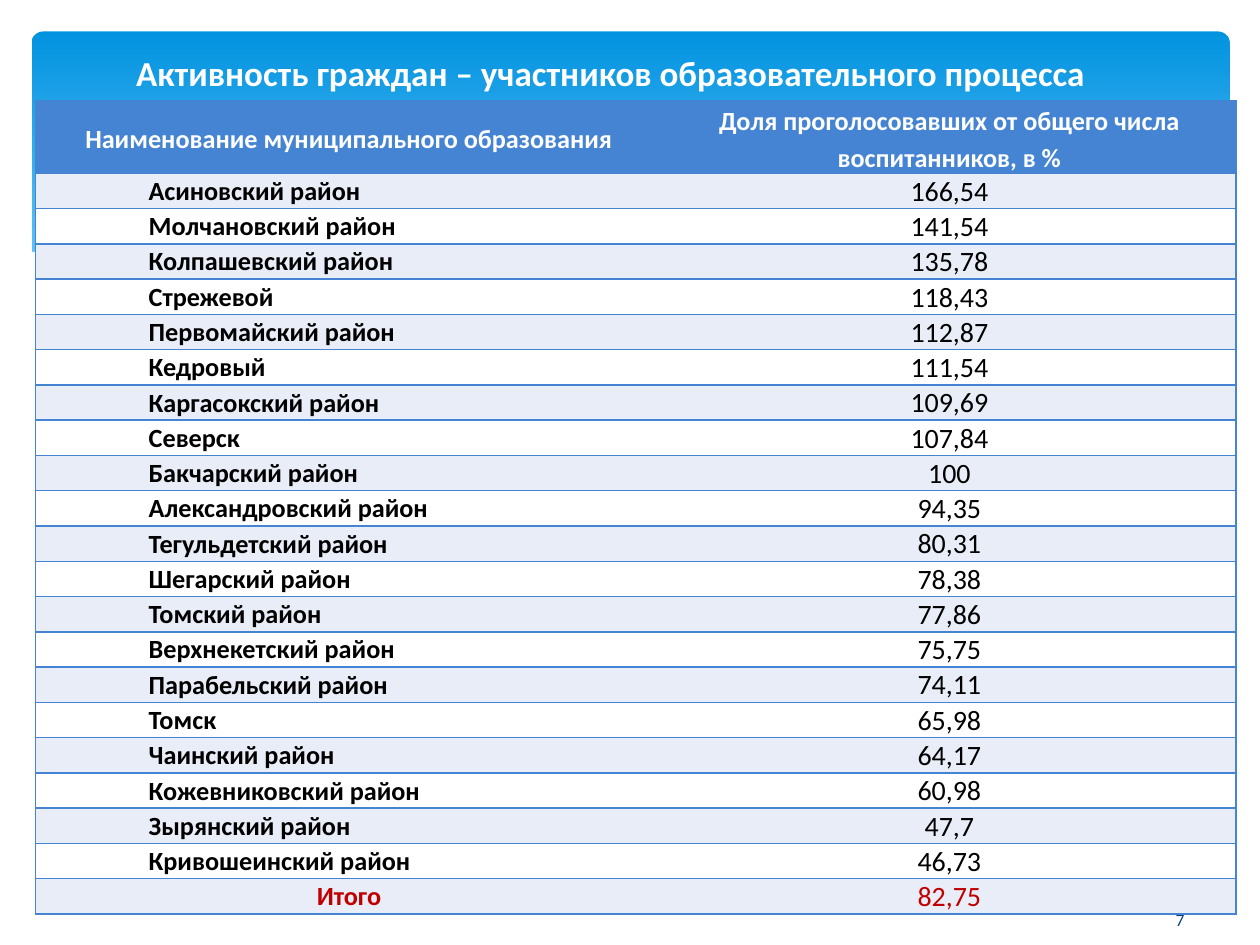
from typing import NamedTuple

from lxml.etree import SubElement
from pptx import Presentation
from pptx.dml.color import RGBColor
from pptx.enum.shapes import MSO_SHAPE
from pptx.enum.text import MSO_ANCHOR, MSO_AUTO_SIZE, PP_ALIGN
from pptx.oxml.ns import qn
from pptx.util import Inches, Pt

FONT = "Calibri"
BLUE, BAND, WHITE, BLACK, RED = "4584D3", "E9EDF7", "FFFFFF", "000000", "C00000"
ROW_HEIGHT, HEADER_HEIGHT = 0.28, 0.5
COLUMN_WIDTHS = (4.98, 4.55)


class Turnout(NamedTuple):
    district: str
    share: str


HEADER = Turnout("Наименование муниципального образования",
                 "Доля проголосовавших от общего числа воспитанников, в %")
DISTRICTS = [
    Turnout("Асиновский район", "166,54"),
    Turnout("Молчановский район", "141,54"),
    Turnout("Колпашевский район", "135,78"),
    Turnout("Стрежевой", "118,43"),
    Turnout("Первомайский район", "112,87"),
    Turnout("Кедровый", "111,54"),
    Turnout("Каргасокский район", "109,69"),
    Turnout("Северск", "107,84"),
    Turnout("Бакчарский район", "100"),
    Turnout("Александровский район", "94,35"),
    Turnout("Тегульдетский район", "80,31"),
    Turnout("Шегарский район", "78,38"),
    Turnout("Томский район", "77,86"),
    Turnout("Верхнекетский район", "75,75"),
    Turnout("Парабельский район", "74,11"),
    Turnout("Томск", "65,98"),
    Turnout("Чаинский район", "64,17"),
    Turnout("Кожевниковский район", "60,98"),
    Turnout("Зырянский район", "47,7"),
    Turnout("Кривошеинский район", "46,73"),
]
TOTAL = Turnout("Итого", "82,75")

WAVE = [
    (9.77, 2.46), (9.4, 2.59), (8.99, 2.69), (8.5, 2.75), (8.09, 2.77),
    (7.61, 2.75), (7.08, 2.7), (6.48, 2.62), (5.79, 2.5), (5.03, 2.33),
    (4.47, 2.2), (3.91, 2.07), (3.4, 1.97), (2.92, 1.9), (2.5, 1.86),
    (1.93, 1.84), (1.46, 1.85), (1.06, 1.89), (0.76, 1.95), (0.46, 2.03),
    (0.23, 2.13), (0.23, 3.29), (9.77, 3.29),
]


def rgb(color: str) -> RGBColor:
    return RGBColor.from_string(color)


def style(p, size: float, color: str, bold: bool = False,
          align: PP_ALIGN = PP_ALIGN.LEFT) -> None:
    p.alignment = align
    f = p.font
    f.name, f.size, f.bold = FONT, Pt(size), bold
    f.color.rgb = rgb(color)


def add_banner(s) -> None:
    """Draw the gradient banner and the white wave that cuts off its foot."""
    banner = s.shapes.add_shape(MSO_SHAPE.ROUNDED_RECTANGLE, Inches(0.25),
                                Inches(0.25), Inches(9.51), Inches(2.7))
    banner.adjustments[0] = 0.034
    banner.fill.gradient()
    banner.fill.gradient_angle = 270
    stops = ((0, "0293E0"), (0.9, "83D3FE"))
    for stop, (position, color) in zip(banner.fill.gradient_stops, stops):
        stop.position = position
        stop.color.rgb = rgb(color)

    builder = s.shapes.build_freeform(*WAVE[0], scale=Inches(1))
    builder.add_line_segments(WAVE[1:], close=True)
    wave = builder.convert_to_shape()
    wave.fill.solid()
    wave.fill.fore_color.rgb = rgb(WHITE)
    for sp in (banner, wave):
        sp.line.fill.background()
        sp.shadow.inherit = False


def add_slide_number(s, number: str) -> None:
    tf = s.shapes.add_textbox(Inches(8.73), Inches(7.1),
                              Inches(1.27), Inches(0.4)).text_frame
    tf.word_wrap = True
    tf.vertical_anchor = MSO_ANCHOR.MIDDLE
    tf.text = number
    style(tf.paragraphs[0], 10, "073E87", align=PP_ALIGN.CENTER)


def set_borders(cell, open_side: str) -> None:
    """Rule every side of the cell except the open one."""
    tc_pr = cell._tc.get_or_add_tcPr()
    for i, side in enumerate(("lnL", "lnR", "lnT", "lnB")):
        ln = SubElement(tc_pr, qn(f"a:{side}"), w=str(Pt(1)))
        if side == open_side:
            SubElement(ln, qn("a:noFill"))
        else:
            fill = SubElement(ln, qn("a:solidFill"))
            SubElement(fill, qn("a:srgbClr"), val=BLUE)
        tc_pr.insert(i, ln)


def fill_cell(cell, text: str, fill: str, margins: tuple[float, float, float]):
    """Set text, fill and (side, top, bottom) margins; return the paragraph."""
    side, top, bottom = (Inches(m) for m in margins)
    cell.margin_left = cell.margin_right = side
    cell.margin_top, cell.margin_bottom = top, bottom
    cell.vertical_anchor = MSO_ANCHOR.MIDDLE
    cell.fill.solid()
    cell.fill.fore_color.rgb = rgb(fill)
    cell.text = text
    return cell.text_frame.paragraphs[0]


def add_turnout_table(s) -> None:
    rows = [HEADER, *DISTRICTS, TOTAL]
    height = HEADER_HEIGHT + ROW_HEIGHT * (len(rows) - 1)
    table = s.shapes.add_table(len(rows), 2, Inches(0.28), Inches(0.8),
                               Inches(sum(COLUMN_WIDTHS)), Inches(height)).table
    for column, width in zip(table.columns, COLUMN_WIDTHS):
        column.width = Inches(width)
    for i, turnout in enumerate(rows):
        table.rows[i].height = Inches(ROW_HEIGHT if i else HEADER_HEIGHT)
        for j, text in enumerate(turnout):
            cell = table.cell(i, j)
            if turnout is HEADER:
                p = fill_cell(cell, text, BLUE, (0.05, 0, 0))
                style(p, 15, WHITE, True, PP_ALIGN.CENTER)
                p.line_spacing = 1.15
            else:
                p = fill_cell(cell, text, BAND if i % 2 else WHITE,
                              (0.01, 0.01, 0))
                is_name = j == 0
                color = RED if turnout is TOTAL else BLACK
                indented = is_name and turnout is not TOTAL
                style(p, 15 if is_name else 16, color, is_name,
                      PP_ALIGN.LEFT if indented else PP_ALIGN.CENTER)
                if indented:
                    p._p.get_or_add_pPr().set("indent", str(Inches(0.89)))
            set_borders(cell, "lnL" if j else "lnR")


def place_title(s, text: str) -> None:
    """Fill the title placeholder and bring it in front of the banner."""
    title = s.shapes.title
    title.left, title.top = Inches(0.98), Inches(0.36)
    title.width, title.height = Inches(8.66), Inches(0.44)
    tf = title.text_frame
    tf.text = text
    tf.word_wrap = True
    tf.vertical_anchor = MSO_ANCHOR.TOP
    tf.auto_size = MSO_AUTO_SIZE.SHAPE_TO_FIT_TEXT
    style(tf.paragraphs[0], 20, WHITE, True)
    s.shapes._spTree.append(title._element)


def main() -> None:
    prs = Presentation()
    prs.slide_width, prs.slide_height = Inches(10), Inches(7.5)
    s = prs.slides.add_slide(prs.slide_layouts[5])
    add_banner(s)
    add_slide_number(s, "7")
    add_turnout_table(s)
    place_title(s, "Активность граждан – участников образовательного процесса")
    prs.save("out.pptx")


if __name__ == "__main__":
    main()
